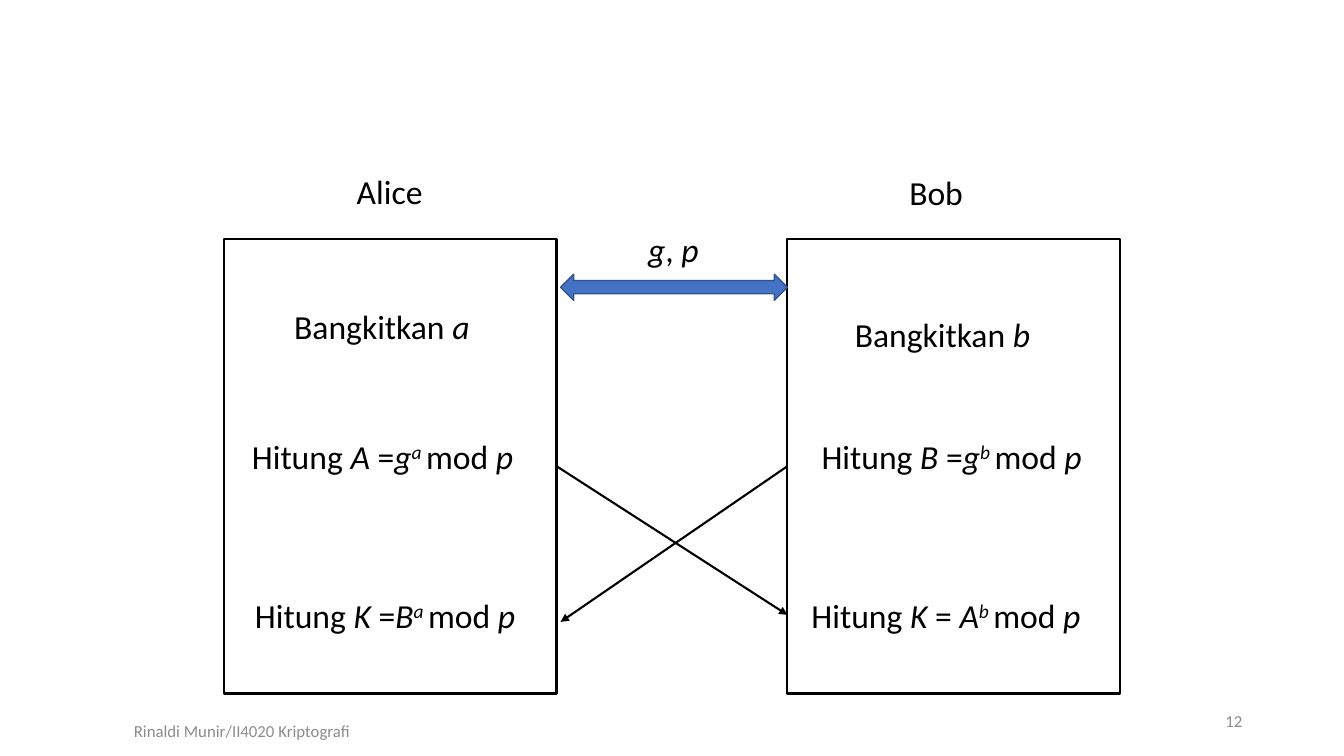
import dataclasses
import typing

import pptx
import pptx.dml.color
import pptx.enum.shapes
import pptx.enum.text
import pptx.oxml.ns
import pptx.util
from lxml import etree

Inches = pptx.util.Inches
Pt = pptx.util.Pt
Align = pptx.enum.text.PP_ALIGN
Anchor = pptx.enum.text.MSO_ANCHOR
Fit = pptx.enum.text.MSO_AUTO_SIZE
Kind = pptx.enum.shapes.MSO_SHAPE

COLORS = {"ink": "000000", "arrow": "4472C4", "edge": "325491", "gray": "8C8C8C"}

# Text frame formats
LABEL = {"word_wrap": False, "auto_size": Fit.SHAPE_TO_FIT_TEXT}
FOOTER = {"word_wrap": True, "vertical_anchor": Anchor.MIDDLE}

# Box geometry
TOP, WIDTH, HEIGHT = 2.37, 3.3, 4.51
ALICE, BOB = 2.22, 7.81


@dataclasses.dataclass
class Label:
    """Parts are split by |; * marks italic and ^ an italic superscript."""
    text: str
    left: float
    top: float
    width: float
    height: float = 0.5
    size: int = 24
    color: str = "ink"
    align: typing.Optional[Align] = None
    frame: dict = dataclasses.field(default_factory=lambda: LABEL)


LABELS = [
    Label("Alice", 3.44, 1.65, 0.86),
    Label("Bob", 8.92, 1.66, 0.74),
    Label("*g|, |*p", 6.33, 2.22, 0.71),
    Label("Bangkitkan |*a", 2.82, 2.99, 1.96),
    Label("Bangkitkan |*b", 8.38, 3.07, 1.96),
    Label("Hitung |*A| =|*g|^a |mod |*p", 2.4, 4.28, 3.11),
    Label("Hitung |*B| =|*g|^b |mod |*p", 8.05, 4.28, 3.1),
    Label("Hitung |*K| =|*B|^a |mod |*p", 2.43, 5.85, 3.09),
    Label("Hitung |*K| = |*A|^b |mod |*p", 7.95, 5.85, 3.18),
    Label("Rinaldi Munir/II4020 Kriptografi", 0.15, 7.05, 4.5, 0.4, 12,
          "gray", Align.CENTER, FOOTER),
    Label("12", 9.42, 6.95, 3, 0.4, 12, "gray", Align.RIGHT, FOOTER),
]


def shade(name: str) -> pptx.dml.color.RGBColor:
    return pptx.dml.color.RGBColor.from_string(COLORS[name])


def apply(target: typing.Any, values: dict) -> None:
    for name, value in values.items():
        setattr(target, name, value)


def draw_shape(slide, kind, left: float, top: float, width: float,
               height: float, fill: typing.Optional[str], line: str,
               weight: float):
    shape = slide.shapes.add_shape(
        kind, Inches(left), Inches(top), Inches(width), Inches(height))
    shape.shadow.inherit = False
    if fill:
        shape.fill.solid()
        shape.fill.fore_color.rgb = shade(fill)
    else:
        shape.fill.background()
    shape.line.color.rgb = shade(line)
    shape.line.width = Pt(weight)
    return shape


def draw_label(slide, label: Label) -> None:
    box = slide.shapes.add_textbox(Inches(label.left), Inches(label.top),
                                   Inches(label.width), Inches(label.height))
    apply(box.text_frame, label.frame)
    para = box.text_frame.paragraphs[0]
    para.alignment = label.align
    for part in label.text.split("|"):
        run = para.add_run()
        run.text = part.lstrip("*^")
        apply(run.font, {"name": "Calibri", "size": Pt(label.size),
                         "italic": part[0] in "*^"})
        run.font.color.rgb = shade(label.color)
        if part[0] == "^":
            run._r.get_or_add_rPr().set("baseline", "30000")


def draw_arrow(slide, start, site: int, end: tuple[float, float]) -> None:
    arrow = slide.shapes.add_connector(
        pptx.enum.shapes.MSO_CONNECTOR.STRAIGHT, start.left, start.top,
        Inches(end[0]), Inches(end[1]))
    arrow.begin_connect(start, site)
    arrow.line.color.rgb = shade("ink")
    arrow.line.width = Pt(1.5)
    qn = pptx.oxml.ns.qn
    etree.SubElement(arrow.line._get_or_add_ln(), qn("a:tailEnd"), type="triangle")
    etree.SubElement(arrow._element.spPr, qn("a:effectLst"))


def main() -> None:
    deck = pptx.Presentation()
    apply(deck, {"slide_width": Inches(13.33), "slide_height": Inches(7.5)})
    slide = deck.slides.add_slide(deck.slide_layouts[6])

    # The two parties and the shared values
    alice, bob = [draw_shape(slide, Kind.RECTANGLE, left, TOP, WIDTH, HEIGHT,
                             None, "ink", 1.5) for left in (ALICE, BOB)]
    draw_shape(slide, Kind.LEFT_RIGHT_ARROW, 5.56, 2.72, 2.25, 0.26,
               "arrow", "edge", 1)

    # Names, steps and footer
    for label in LABELS:
        draw_label(slide, label)

    # Crossed exchange of public keys
    draw_arrow(slide, bob, 1, (5.56, 6.17))
    draw_arrow(slide, alice, 3, (BOB, 6.1))

    deck.save("out.pptx")


if __name__ == "__main__":
    main()
